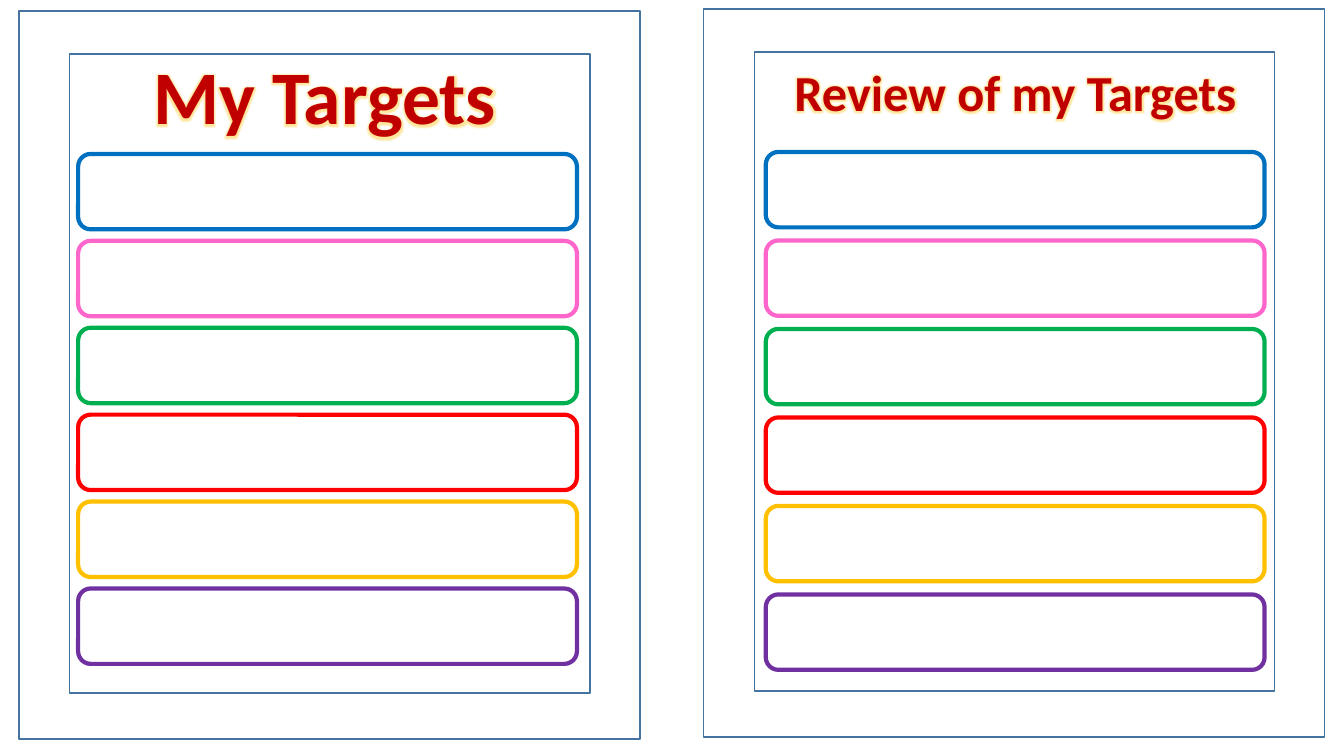
from lxml import etree
from pptx import Presentation
from pptx.dml.color import RGBColor
from pptx.enum.shapes import MSO_SHAPE as SHAPE
from pptx.enum.text import MSO_ANCHOR, PP_ALIGN
from pptx.oxml.ns import qn
from pptx.util import Cm, Pt

BAR_COLOURS = ["0070C0", "FF66CC", "00B050", "FF0000", "FFC000", "7030A0"]
FRAME_COLOUR = "43739E"
TITLE_COLOUR = "C00000"
GLOW_COLOUR = "FFC000"
BAR_W, BAR_H = 12.57, 1.9


def rgb(value):
    return RGBColor.from_string(value)


def add_box(s, kind, x, y, w, h, line, width, fill=None):
    sp = s.shapes.add_shape(kind, Cm(x), Cm(y), Cm(w), Cm(h))
    sp.shadow.inherit = False
    if fill:
        sp.fill.solid()
        sp.fill.fore_color.rgb = rgb(fill)
    else:
        sp.fill.background()
    sp.line.color.rgb = rgb(line)
    sp.line.width = Pt(width)


def add_glow(r):
    """Put a soft golden glow around the letters of a run."""
    effects = etree.Element(qn("a:effectLst"))
    glow = etree.SubElement(effects, qn("a:glow"), rad=str(Pt(5)))
    colour = etree.SubElement(glow, qn("a:srgbClr"), val=GLOW_COLOUR)
    etree.SubElement(colour, qn("a:alpha"), val="40000")
    r.font.fill._xPr.find(qn("a:solidFill")).addnext(effects)


def add_title(s, x, y, w, h, text, size):
    tf = s.shapes.add_textbox(Cm(x), Cm(y), Cm(w), Cm(h)).text_frame
    tf.word_wrap = False
    tf.vertical_anchor = MSO_ANCHOR.TOP
    p = tf.paragraphs[0]
    p.alignment = PP_ALIGN.CENTER
    r = p.add_run()
    r.text = text
    r.font.name = "Calibri"
    r.font.size = Pt(size)
    r.font.bold = True
    r.font.color.rgb = rgb(TITLE_COLOUR)
    add_glow(r)


def add_card(s, x, y, title, size, title_box, bars_x, pitch):
    """Draw one framed card: a title above a column of empty bars."""
    add_box(s, SHAPE.RECTANGLE, x, y, 15.65, 18.34, FRAME_COLOUR, 1)
    add_box(s, SHAPE.RECTANGLE, x + 1.28, y + 1.08, 13.11, 16.1, FRAME_COLOUR, 1)
    dx, dy, w, h = title_box
    add_title(s, x + dx, y + dy, w, h, title, size)
    for i, colour in enumerate(BAR_COLOURS):
        add_box(s, SHAPE.ROUNDED_RECTANGLE, x + bars_x, y + 3.6 + i * pitch,
                BAR_W, BAR_H, colour, 3, "FFFFFF")


def main():
    prs = Presentation()
    prs.slide_width, prs.slide_height = Cm(33.87), Cm(19.05)
    s = prs.slides.add_slide(prs.slide_layouts[6])
    add_card(s, 0.48, 0.28, "My Targets", 54, (3.08, 0.84, 9.25, 2.57), 1.49, 2.19)
    add_card(s, 17.73, 0.23, "Review of my Targets", 36,
             (1.98, 1.19, 11.76, 1.8), 1.57, 2.23)
    prs.save("out.pptx")


if __name__ == "__main__":
    main()
